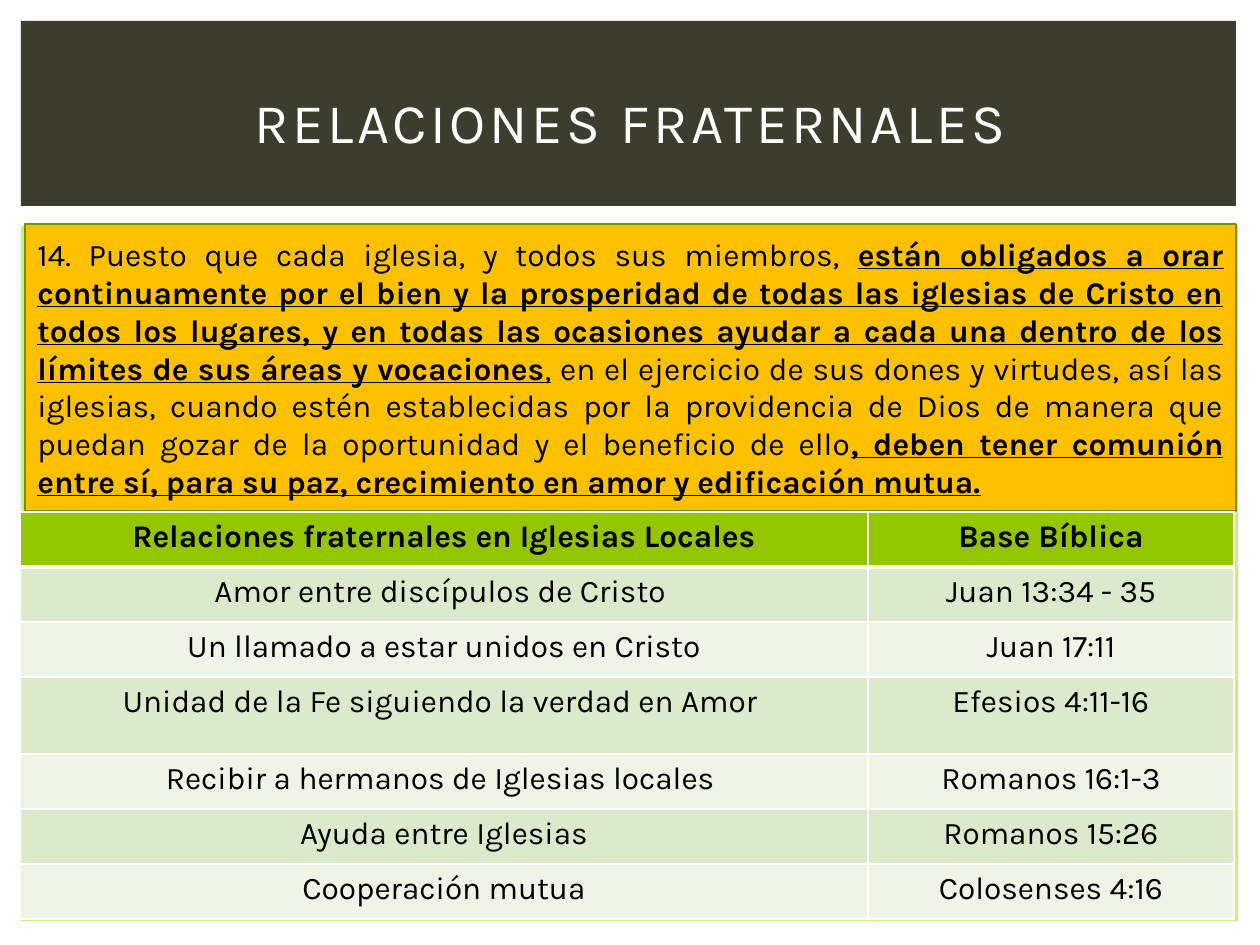
from dataclasses import dataclass

from lxml.etree import SubElement
from pptx import Presentation
from pptx.dml.color import RGBColor
from pptx.enum.shapes import MSO_SHAPE
from pptx.enum.text import MSO_ANCHOR, MSO_AUTO_SIZE, PP_ALIGN
from pptx.oxml.ns import qn
from pptx.util import Emu, Pt

EMU_PER_PX = 914400 / 126
FONT = "Karla"
BLACK, WHITE = "000000", "FFFFFF"
HEADER_FILL, BAND_FILLS = "94C600", ("DCEACC", "EEF5E7")
COLUMN_WIDTHS = (848, 366)


@dataclass(frozen=True)
class Box:
    left: int
    top: int
    width: int
    height: int


@dataclass(frozen=True)
class Panel:
    box: Box
    fill: str
    outline: str | None = None


@dataclass(frozen=True)
class Phrase:
    text: str
    bold: bool = False
    underline: bool = False


@dataclass(frozen=True)
class Relation:
    topic: str
    passage: str
    height: int = 55


BACKDROP = Panel(Box(21, 226, 1217, 695), "CAF278")
BANNER = Panel(Box(21, 21, 1215, 185), "3E3D2D")
STATEMENT = Panel(Box(25, 224, 1211, 287), "FFC000", "6D9200")
TITLE_BOX = Box(53, 49, 1155, 145)
TABLE_BOX = Box(20, 512, 1214, 407)

PHRASES = (
    Phrase("14. Puesto que cada iglesia, y todos sus miembros, "),
    Phrase(
        "están obligados a orar continuamente por el bien y la prosperidad de todas "
        "las iglesias de Cristo en todos los lugares, y en todas las ocasiones ayudar "
        "a cada una dentro de los límites de sus áreas y vocaciones", True, True),
    Phrase(",", underline=True),
    Phrase(
        " en el ejercicio de sus dones y virtudes, así las iglesias, cuando estén "
        "establecidas por la providencia de Dios de manera que puedan gozar de la "
        "oportunidad y el beneficio de ello"),
    Phrase(
        ", deben tener comunión entre sí, para su paz, crecimiento en amor y "
        "edificación mutua.", True, True),
)

RELATIONS = (
    Relation("Relaciones fraternales en Iglesias Locales", "Base Bíblica"),
    Relation("Amor entre discípulos de Cristo ", "Juan 13:34 - 35"),
    Relation("Un llamado a estar unidos en Cristo", "Juan 17:11"),
    Relation("Unidad de la Fe siguiendo la verdad en Amor ", "Efesios 4:11-16", 77),
    Relation("Recibir a hermanos de Iglesias locales ", "Romanos 16:1-3"),
    Relation("Ayuda entre Iglesias", "Romanos 15:26"),
    Relation("Cooperación mutua", "Colosenses 4:16"),
)


def px(length: int) -> Emu:
    """Convert pixels to EMU."""
    return Emu(round(length * EMU_PER_PX))


def place(box: Box) -> tuple[Emu, ...]:
    """Return the box as left, top, width and height in EMU."""
    return tuple(map(px, (box.left, box.top, box.width, box.height)))


def paint(fill, color: str) -> None:
    """Apply a solid hex colour to a fill."""
    fill.solid()
    fill.fore_color.rgb = RGBColor.from_string(color)


def style_run(run, size: int, color: str, bold: bool = False) -> None:
    """Set the font, size, colour and weight of a run."""
    run.font.name = FONT
    run.font.size = Pt(size)
    run.font.bold = bold
    paint(run.font.fill, color)


def draw_panel(slide, panel: Panel):
    """Draw a flat rectangle with an optional outline."""
    rectangle = slide.shapes.add_shape(MSO_SHAPE.RECTANGLE, *place(panel.box))
    rectangle.shadow.inherit = False
    paint(rectangle.fill, panel.fill)
    if panel.outline:
        paint(rectangle.line.fill, panel.outline)
        rectangle.line.width = Pt(1.5)
    else:
        rectangle.line.fill.background()
    return rectangle


def draw_title(slide, text: str) -> None:
    """Format the title placeholder and bring it in front of the banner."""
    title = slide.shapes.title
    title.left, title.top, title.width, title.height = place(TITLE_BOX)
    frame = title.text_frame
    frame.text = text
    frame.auto_size = MSO_AUTO_SIZE.NONE
    frame.vertical_anchor = MSO_ANCHOR.MIDDLE
    frame.paragraphs[0].alignment = PP_ALIGN.CENTER
    run = frame.paragraphs[0].runs[0]
    style_run(run, 32, WHITE)
    run.font.element.set("spc", "200") if hasattr(run.font, "element") else run._r.get_or_add_rPr().set("spc", "200")
    title.element.getparent().append(title.element)


def draw_statement(slide) -> None:
    """Draw the justified statement with its emphasised phrases."""
    frame = draw_panel(slide, STATEMENT).text_frame
    frame.word_wrap = True
    frame.vertical_anchor = MSO_ANCHOR.MIDDLE
    paragraph = frame.paragraphs[0]
    paragraph.alignment = PP_ALIGN.JUSTIFY
    for phrase in PHRASES:
        run = paragraph.add_run()
        run.text = phrase.text
        style_run(run, 18, BLACK, phrase.bold)
        run.font.underline = phrase.underline


def add_borders(cell, top: int, bottom: int) -> None:
    """Give a cell white borders with the given top and bottom widths."""
    properties = cell._tc.get_or_add_tcPr()
    for side, width in (("L", 1), ("R", 1), ("T", top), ("B", bottom)):
        border = SubElement(properties, qn(f"a:ln{side}"), w=str(Pt(width)))
        solid = SubElement(border, qn("a:solidFill"))
        SubElement(solid, qn("a:srgbClr"), val=WHITE)


def draw_relations(slide) -> None:
    """Draw the table of relations and their passages."""
    table = slide.shapes.add_table(
        len(RELATIONS), len(COLUMN_WIDTHS), *place(TABLE_BOX)).table
    for column, width in zip(table.columns, COLUMN_WIDTHS):
        column.width = px(width)
    for index, (row, relation) in enumerate(zip(table.rows, RELATIONS)):
        row.height = px(relation.height)
        is_header = index == 0
        fill = HEADER_FILL if is_header else BAND_FILLS[(index - 1) % 2]
        for cell, text in zip(row.cells, (relation.topic, relation.passage)):
            add_borders(cell, 3 if index == 1 else 1, 3 if is_header else 1)
            paint(cell.fill, fill)
            cell.text_frame.text = text
            paragraph = cell.text_frame.paragraphs[0]
            paragraph.alignment = PP_ALIGN.CENTER
            style_run(paragraph.runs[0], 18, BLACK, is_header)


def main() -> None:
    """Build the slide and save it."""
    presentation = Presentation()
    presentation.slide_width, presentation.slide_height = px(1260), px(945)
    slide = presentation.slides.add_slide(presentation.slide_layouts[5])
    paint(slide.background.fill, WHITE)
    draw_panel(slide, BACKDROP)
    draw_panel(slide, BANNER)
    draw_title(slide, "RELACIONES FRATERNALES")
    draw_statement(slide)
    draw_relations(slide)
    presentation.save("out.pptx")


if __name__ == "__main__":
    main()
